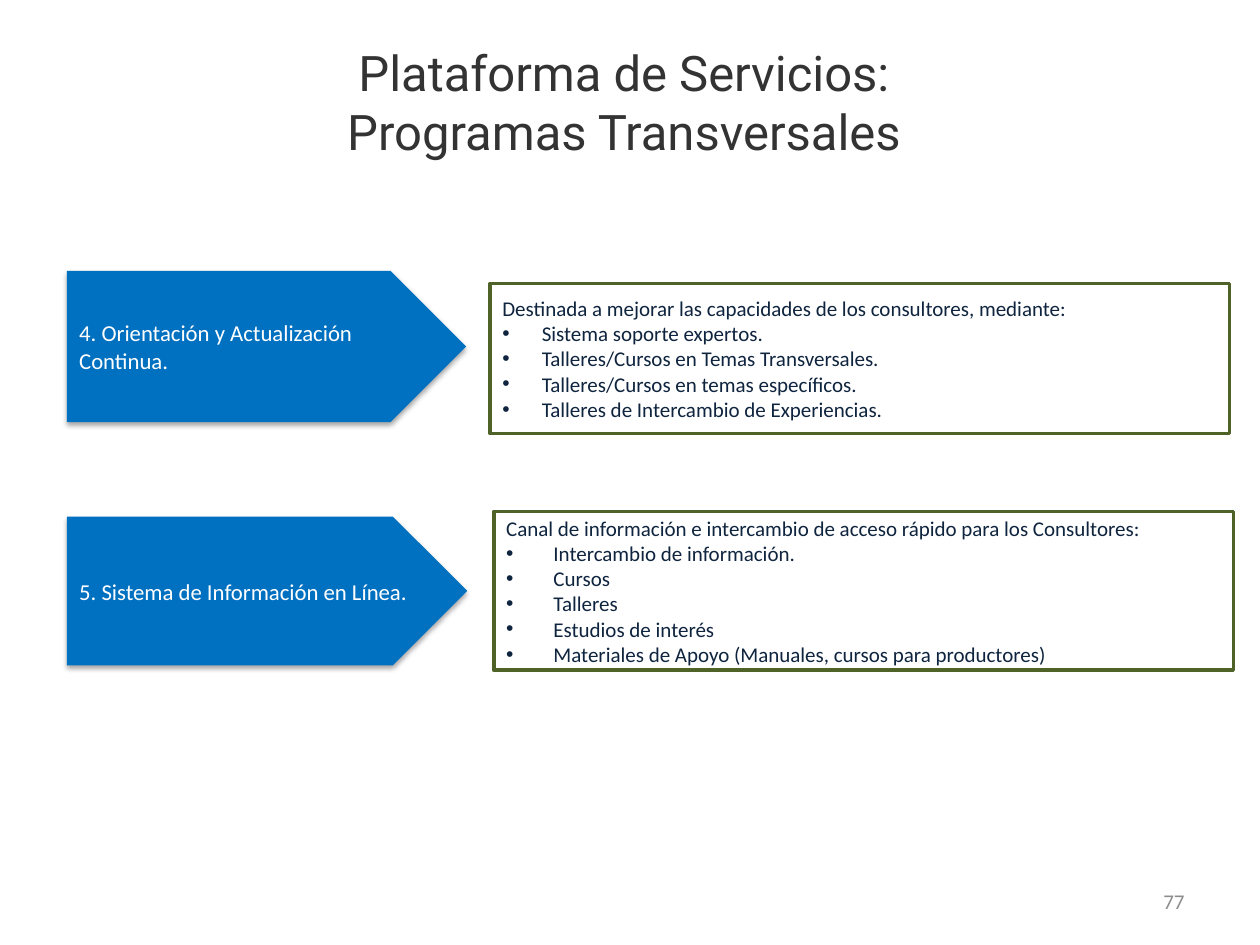
from lxml.etree import SubElement
from pptx import Presentation
from pptx.dml.color import RGBColor
from pptx.enum.shapes import MSO_SHAPE
from pptx.enum.text import MSO_ANCHOR, PP_ALIGN
from pptx.oxml.ns import qn
from pptx.util import Pt

PROGRAMS = [
    {
        "name": "4. Orientación y Actualización Continua.",
        "arrow": (38.2, 154.8, 228.2, 86.4),
        "panel": (280, 162, 422.6, 85.7),
        "indent": 22.5,
        "intro": "Destinada a mejorar las capacidades de los consultores, mediante:",
        "items": [
            "Sistema soporte expertos.",
            "Talleres/Cursos en Temas Transversales.",
            "Talleres/Cursos en temas específicos.",
            "Talleres de Intercambio de Experiencias.",
        ],
    },
    {
        "name": "5. Sistema de Información en Línea.",
        "arrow": (38.2, 295.2, 228.8, 85),
        "panel": (282.2, 292.3, 422.6, 90.7),
        "indent": 27,
        "intro": "Canal de información e intercambio de acceso rápido para los Consultores:",
        "items": [
            "Intercambio de información.",
            "Cursos",
            "Talleres",
            "Estudios de interés",
            "Materiales de Apoyo (Manuales, cursos para productores)",
        ],
    },
]


def color(value):
    """Return the colour for a hex string."""
    return RGBColor.from_string(value)


def in_points(box):
    """Convert a left, top, width, height box to lengths."""
    return [Pt(length) for length in box]


def write(shape, lines, size, ink, align, font="Calibri", indent=0):
    """Write lines centred vertically, with bullets after the first if indented."""
    frame = shape.text_frame
    frame.word_wrap = True
    frame.vertical_anchor = MSO_ANCHOR.MIDDLE
    for index, line in enumerate(lines):
        para = frame.paragraphs[0] if index == 0 else frame.add_paragraph()
        para.text = line
        para.alignment = align
        if indent and index:
            add_bullet(para, indent)
        para.font.name = font
        para.font.size = Pt(size)
        para.font.color.rgb = color(ink)


def add_bullet(para, indent):
    """Give a paragraph a round bullet and a hanging indent."""
    properties = para._p.get_or_add_pPr()
    properties.set("marL", str(Pt(indent)))
    properties.set("indent", str(-Pt(indent)))
    SubElement(properties, qn("a:buFont"), typeface="Arial")
    SubElement(properties, qn("a:buChar"), char="•")


def add_soft_shadow(shape):
    """Add a soft shadow falling straight down."""
    shape.shadow.inherit = False
    effects = shape._element.spPr.find(qn("a:effectLst"))
    shadow = SubElement(
        effects, qn("a:outerShdw"), blurRad=str(Pt(3.1)), dist=str(Pt(1.8)),
        dir="5400000", rotWithShape="0",
    )
    ink = SubElement(shadow, qn("a:srgbClr"), val="000000")
    SubElement(ink, qn("a:alpha"), val="35000")


def add_text(page, box, lines, size, ink, align, font="Calibri"):
    """Place a plain text box."""
    shape = page.shapes.add_textbox(*in_points(box))
    write(shape, lines, size, ink, align, font)


def add_arrow(page, box, name):
    """Place the blue arrow that names a program."""
    arrow = page.shapes.add_shape(MSO_SHAPE.PENTAGON, *in_points(box))
    arrow.fill.solid()
    arrow.fill.fore_color.rgb = color("0070C0")
    arrow.line.fill.background()
    add_soft_shadow(arrow)
    write(arrow, [name], 13, "FFFFFF", PP_ALIGN.LEFT)


def add_panel(page, box, intro, items, indent):
    """Place the outlined panel that describes a program."""
    panel = page.shapes.add_shape(MSO_SHAPE.RECTANGLE, *in_points(box))
    panel.shadow.inherit = False
    panel.fill.background()
    panel.line.color.rgb = color("4F6228")
    panel.line.width = Pt(2)
    write(panel, [intro, *items], 12, "0F243E", PP_ALIGN.JUSTIFY, indent=indent)


def main():
    """Build and save the slide."""
    deck = Presentation()
    deck.slide_width, deck.slide_height = Pt(720), Pt(540)
    page = deck.slides.add_slide(deck.slide_layouts[6])
    for program in PROGRAMS:
        add_arrow(page, program["arrow"], program["name"])
        add_panel(page, program["panel"], program["intro"], program["items"], program["indent"])
    title = ["Plataforma de Servicios: ", "Programas Transversales "]
    add_text(page, (36, 13, 648, 90), title, 28, "333333", PP_ALIGN.CENTER, "Roboto")
    add_text(page, (516, 500.4, 168, 28.8), ["77"], 12, "8C8C8C", PP_ALIGN.RIGHT)
    deck.save("out.pptx")


if __name__ == "__main__":
    main()
